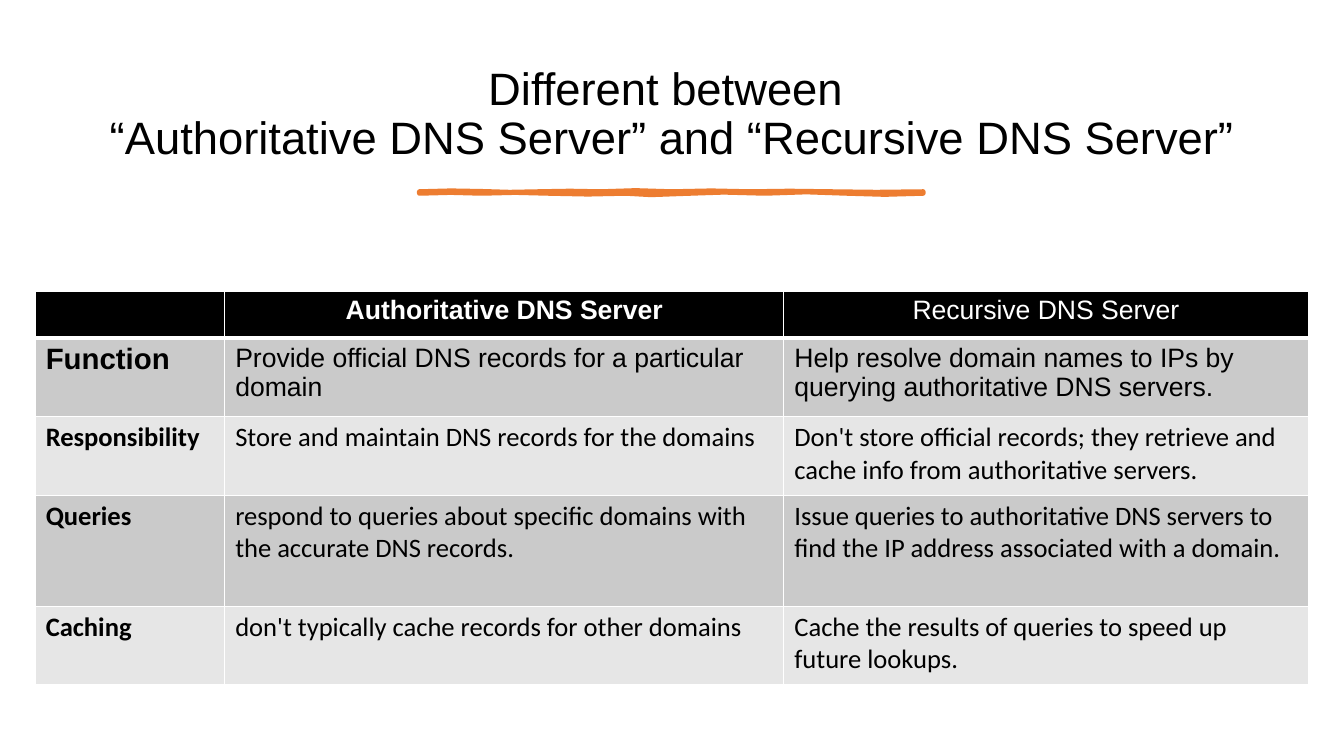
from dataclasses import dataclass

from lxml.etree import SubElement
from pptx import Presentation
from pptx.dml.color import RGBColor
from pptx.enum.text import MSO_ANCHOR, MSO_AUTO_SIZE, PP_ALIGN
from pptx.oxml.ns import qn
from pptx.util import Pt


@dataclass(frozen=True)
class Theme:
    black: str = "000000"
    white: str = "FFFFFF"
    orange: str = "ED7D31"
    dark_band: str = "CACACA"
    light_band: str = "E6E6E6"
    heading_font: str = "Arial"
    body_font: str = "Calibri"
    title_size: float = 32.4
    function_size: float = 21
    body_size: float = 19


theme = Theme()


def write(frame, text, font=theme.body_font, size=theme.body_size,
          color=theme.black, bold=False, align=PP_ALIGN.LEFT, spacing=None):
    paragraph = frame.paragraphs[0]
    paragraph.text = text
    paragraph.alignment = align
    paragraph.line_spacing = spacing
    for run in paragraph.runs:
        run.font.name = font
        run.font.size = Pt(size)
        run.font.bold = bold
        run.font.color.rgb = RGBColor.from_string(color)
    for line_break in paragraph._p.findall(qn("a:br")):
        SubElement(line_break, qn("a:rPr"), sz=str(round(size * 100)))


deck = Presentation()
deck.slide_width, deck.slide_height = Pt(960), Pt(540)
slide = deck.slides.add_slide(deck.slide_layouts[5])

title = slide.shapes.title
title.left, title.top, title.width, title.height = Pt(50.4), Pt(33.1), Pt(859), Pt(98.6)
title.text_frame.word_wrap = True
title.text_frame.auto_size = MSO_AUTO_SIZE.NONE
title.text_frame.vertical_anchor = MSO_ANCHOR.MIDDLE
write(title.text_frame, "Different between \v“Authoritative DNS Server” and “Recursive DNS Server”",
      font=theme.heading_font, size=theme.title_size, align=PP_ALIGN.CENTER, spacing=0.9)

brush_edge = [
    (299.5, 136.8), (322, 136.2), (344, 136.6), (364, 137.2), (384.5, 136.8), (407, 136.4),
    (429, 136.8), (454, 136), (480, 136.8), (508, 136.2), (535.7, 136.8), (564, 136.4),
    (594, 136.8), (626, 137.2), (659.5, 136.8), (659.5, 138.2), (632, 139), (604.8, 138.2),
    (576, 137.2), (546.5, 138.2), (517, 137.4), (487.4, 138.4), (465, 139.2), (447, 138.2),
    (420, 138.8), (391.7, 138.2), (368, 137.6), (344, 138.2), (322, 137.6), (299.5, 138.2),
]
brush_points = [(Pt(x), Pt(y)) for x, y in brush_edge]
brush = slide.shapes.build_freeform(*brush_points[0])
brush.add_line_segments(brush_points[1:], close=True)
underline = brush.convert_to_shape()
underline.shadow.inherit = False
underline.fill.solid()
underline.fill.fore_color.rgb = RGBColor.from_string(theme.orange)
underline.line.color.rgb = RGBColor.from_string(theme.orange)
underline.line.width = Pt(3.25)

comparison = [
    ("", "Authoritative DNS Server", "Recursive DNS Server"),
    ("Function", "Provide official DNS records for a particular domain",
     "Help resolve domain names to IPs by querying authoritative DNS servers."),
    ("Responsibility", "Store and maintain DNS records for the domains",
     "Don't store official records; they retrieve and cache info from authoritative servers."),
    ("Queries", "respond to queries about specific domains with the accurate DNS records.",
     "Issue queries to authoritative DNS servers to find the IP address associated with a domain."),
    ("Caching", "don't typically cache records for other domains",
     "Cache the results of queries to speed up future lookups."),
]
column_widths = [135.4, 399.4, 374.6]
row_heights = [33.6, 56.2, 56.2, 79.2, 56.2]
table = slide.shapes.add_table(len(comparison), len(column_widths), Pt(25.1), Pt(207.8),
                               Pt(sum(column_widths)), Pt(sum(row_heights))).table
for column, width in zip(table.columns, column_widths):
    column.width = Pt(width)
for row, height in zip(table.rows, row_heights):
    row.height = Pt(height)

for r, entries in enumerate(comparison):
    header = r == 0
    band = theme.black if header else theme.dark_band if r % 2 else theme.light_band
    for c, entry in enumerate(entries):
        cell = table.cell(r, c)
        cell.margin_left = cell.margin_right = Pt(7.6)
        properties = cell._tc.get_or_add_tcPr()
        for side in ("L", "R", "T", "B"):
            thick = (r, side) in ((0, "B"), (1, "T"))
            border = SubElement(properties, qn(f"a:ln{side}"), w=str(Pt(3 if thick else 1)))
            SubElement(SubElement(border, qn("a:solidFill")), qn("a:srgbClr"), val=theme.white)
        cell.fill.solid()
        cell.fill.fore_color.rgb = RGBColor.from_string(band)
        write(cell.text_frame, entry,
              font=theme.heading_font if r < 2 else theme.body_font,
              size=theme.function_size if (r, c) == (1, 0) else theme.body_size,
              color=theme.white if header else theme.black,
              bold=c == 1 if header else c == 0,
              align=PP_ALIGN.CENTER if header else PP_ALIGN.LEFT)

deck.save("out.pptx")
